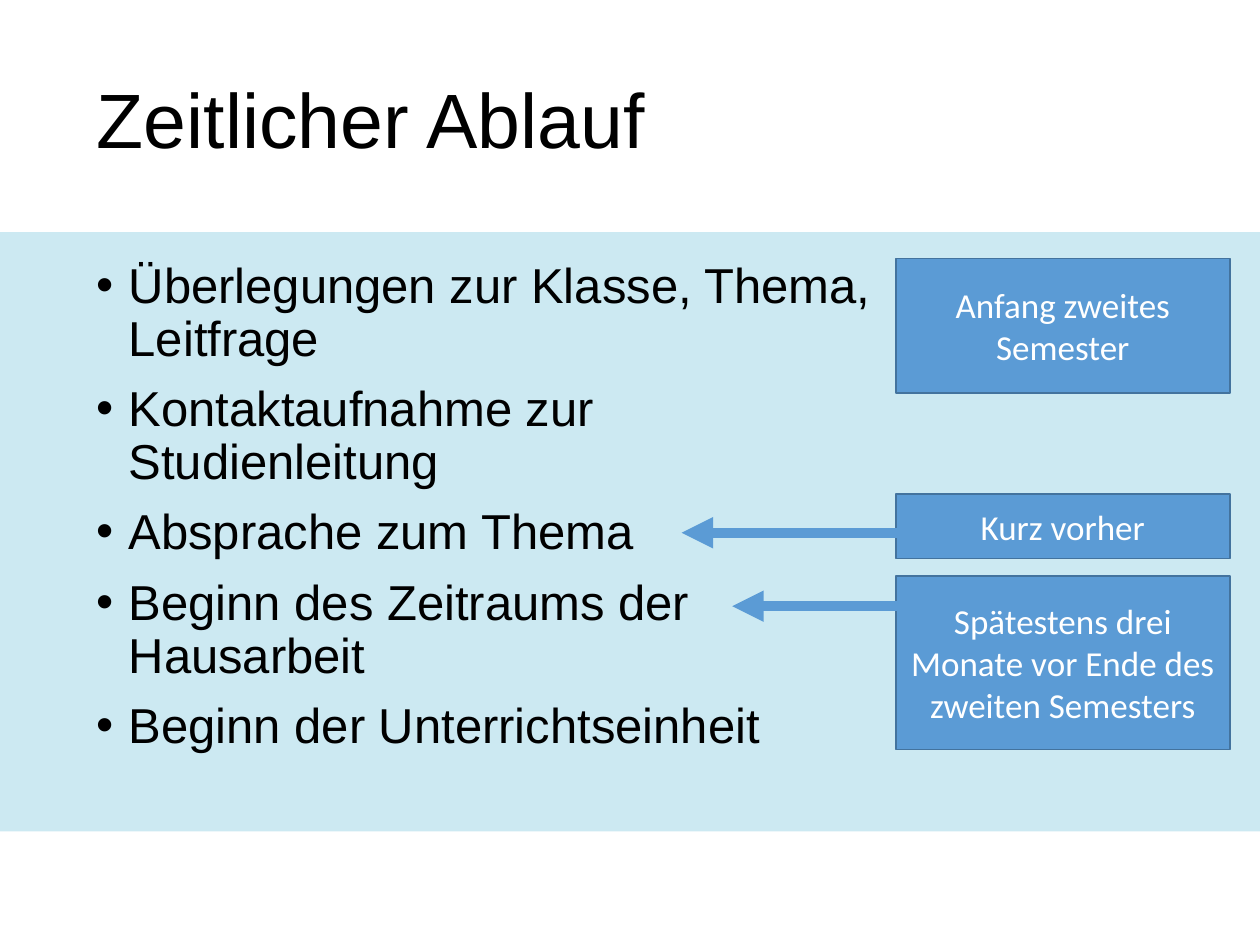
"""Build the slide on the schedule of the term paper."""
import lxml.etree
import pptx
import pptx.dml.color
import pptx.enum.shapes
import pptx.enum.text
import pptx.oxml.ns
import pptx.util

Cm, Pt = pptx.util.Cm, pptx.util.Pt
RGB = pptx.dml.color.RGBColor.from_string
qn = pptx.oxml.ns.qn
ALIGN = pptx.enum.text.PP_ALIGN
MIDDLE = pptx.enum.text.MSO_ANCHOR.MIDDLE
RECT = pptx.enum.shapes.MSO_SHAPE.RECTANGLE

THEME = {
    "text": RGB("000000"), "band": RGB("CCE9F2"), "box": RGB("5B9BD5"),
    "border": RGB("43739E"), "box_text": RGB("FFFFFF"),
    "font": "Arial", "box_font": "Calibri",
    "title_size": Pt(44), "body_size": Pt(28), "box_size": Pt(20),
}


def format_text(p, font, size, color, align):
    p.alignment = align
    for r in p.runs:
        r.font.name, r.font.size, r.font.color.rgb = font, size, color


def add_rect(left, top, width, height, fill):
    sp = s.shapes.add_shape(RECT, Cm(left), Cm(top), Cm(width), Cm(height))
    sp.shadow.inherit = False
    sp.fill.solid()
    sp.fill.fore_color.rgb = fill
    return sp


prs = pptx.Presentation()
prs.slide_width, prs.slide_height = Cm(25.4), Cm(19.05)
s = prs.slides.add_slide(prs.slide_layouts[1])

band = add_rect(0, 4.68, 25.4, 12.08, THEME["band"])
band.line.fill.background()
s.shapes._spTree.insert(2, band._element)

title = s.shapes.title
title.left, title.top, title.width, title.height = Cm(1.7), Cm(0.64), Cm(22), Cm(3.7)
tf = title.text_frame
tf.text = "Zeitlicher Ablauf"
tf.auto_size = pptx.enum.text.MSO_AUTO_SIZE.NONE
tf.vertical_anchor = MIDDLE
tf.paragraphs[0].line_spacing = 0.9
format_text(tf.paragraphs[0], THEME["font"], THEME["title_size"], THEME["text"], ALIGN.LEFT)

body = s.placeholders[1]
body.left, body.top, body.width, body.height = Cm(1.7), Cm(5.13), Cm(16.36), Cm(11.15)
tf = body.text_frame
tf.text = "\n".join([
    "Überlegungen zur Klasse, Thema, Leitfrage",
    "Kontaktaufnahme zur Studienleitung",
    "Absprache zum Thema",
    "Beginn des Zeitraums der Hausarbeit",
    "Beginn der Unterrichtseinheit",
])
tf.auto_size = pptx.enum.text.MSO_AUTO_SIZE.NONE
for i, p in enumerate(tf.paragraphs):
    pPr = p._p.get_or_add_pPr()
    pPr.set("marL", str(Cm(0.64)))
    pPr.set("indent", str(Cm(-0.64)))
    lxml.etree.SubElement(pPr, qn("a:buFont"), typeface=THEME["font"])
    lxml.etree.SubElement(pPr, qn("a:buChar"), char="•")
    p.line_spacing = 0.9
    p.space_before = Pt(10 if i else 0)
    format_text(p, THEME["font"], THEME["body_size"], THEME["text"], ALIGN.LEFT)

for top, height, text in [
    (5.21, 2.72, "Anfang zweites Semester"),
    (11.61, 3.5, "Spätestens drei Monate vor Ende des zweiten Semesters"),
    (9.96, 1.3, "Kurz vorher"),
]:
    box = add_rect(18.06, top, 6.73, height, THEME["box"])
    box.line.color.rgb = THEME["border"]
    box.line.width = Pt(1)
    tf = box.text_frame
    tf.text = text
    tf.word_wrap = True
    tf.vertical_anchor = MIDDLE
    format_text(tf.paragraphs[0], THEME["box_font"], THEME["box_size"], THEME["box_text"], ALIGN.CENTER)

for tip, y in [(14.76, 12.22), (13.74, 10.74)]:
    arrow = s.shapes.add_connector(
        pptx.enum.shapes.MSO_CONNECTOR.STRAIGHT, Cm(18.57), Cm(y), Cm(tip), Cm(y))
    arrow.line.color.rgb = THEME["box"]
    arrow.line.width = Pt(6)
    lxml.etree.SubElement(arrow.line._get_or_add_ln(), qn("a:tailEnd"), type="triangle")
    lxml.etree.SubElement(arrow._element.spPr, qn("a:effectLst"))

prs.save("out.pptx")
